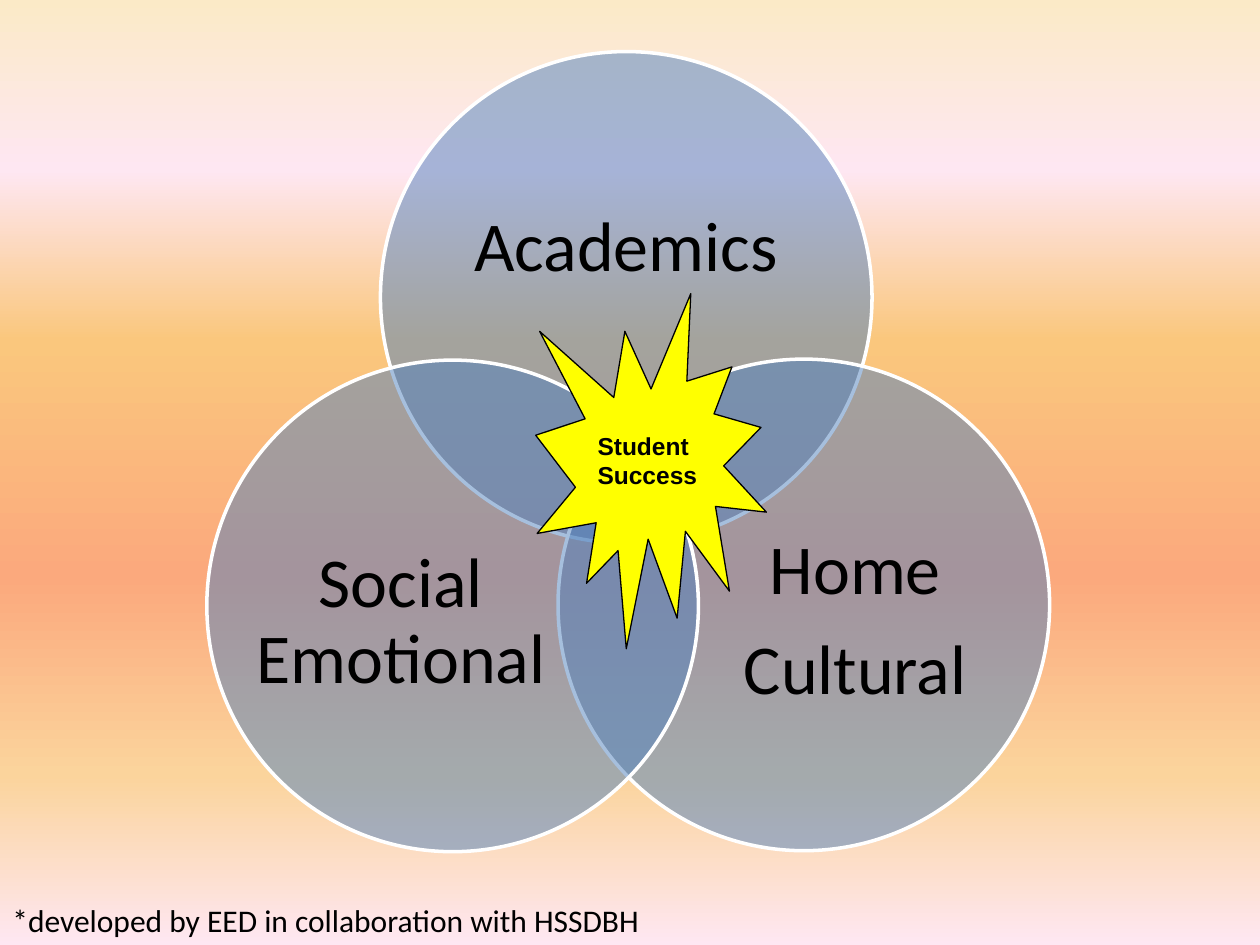
from lxml.etree import SubElement
from pptx import Presentation
from pptx.dml.color import RGBColor
from pptx.enum.shapes import MSO_SHAPE as Shape
from pptx.enum.text import MSO_ANCHOR as Anchor, MSO_AUTO_SIZE as AutoSize, PP_ALIGN as Align
from pptx.oxml.ns import qn
from pptx.util import Cm, Pt

COLORS = {"circle": "4F81BD", "outline": "FFFFFF", "star": "FFFF00", "ink": "000000"}
BACKGROUND_STOPS = [(0, "FBEAC7"), (18, "FEE7F2"), (36, "FAC77D"),
                    (61, "FBA97D"), (82, "FBD49C"), (100, "FEE7F2")]


def add_figure(kind, left, top, width, height, fill, line, line_width):
    shape = slide.shapes.add_shape(kind, Cm(left), Cm(top), Cm(width), Cm(height))
    shape.shadow.inherit = False
    shape.fill.solid()
    shape.fill.fore_color.rgb = RGBColor.from_string(COLORS[fill])
    shape.line.color.rgb = RGBColor.from_string(COLORS[line])
    shape.line.width = Pt(line_width)
    return shape


def write_text(shape, text, font, size, bold=False, align=Align.LEFT):
    text_frame = shape.text_frame
    text_frame.word_wrap = True
    text_frame.text = text
    for paragraph in text_frame.paragraphs:
        paragraph.alignment = align
        for run in paragraph.runs:
            run.font.name = font
            run.font.size = Pt(size)
            run.font.bold = bold
            run.font.color.rgb = RGBColor.from_string(COLORS["ink"])
    return text_frame


presentation = Presentation()
presentation.slide_width, presentation.slide_height = Cm(25.4), Cm(19.05)
slide = presentation.slides.add_slide(presentation.slide_layouts[6])

# Background: vertical gradient with six stops
background_fill = slide.background.fill
background_fill.gradient()
background_fill.gradient_angle = 270  # counter-clockwise, so top to bottom
stop_list = slide.element.find(".//" + qn("a:gsLst"))
for stop in list(stop_list):
    stop_list.remove(stop)
for position, color in BACKGROUND_STOPS:
    stop = SubElement(stop_list, qn("a:gs"), pos=str(position * 1000))
    SubElement(stop, qn("a:srgbClr"), val=color)

# Venn circles, each followed by its label box (left, top, width, height)
DIAMETER = 9.91
circles = [
    ("Academics", 7.67, 1.04, (8.99, 2.79, 7.26, 4.45)),
    ("Home\nCultural", 11.25, 7.24, (14.27, 9.8, 5.94, 5.46)),
    ("Social Emotional", 4.17, 7.26, (5.11, 9.83, 5.94, 5.46)),
]
for label, left, top, label_box in circles:
    circle = add_figure(Shape.OVAL, left, top, DIAMETER, DIAMETER, "circle", "outline", 2)
    fill_color = circle.element.spPr.find(qn("a:solidFill"))[0]
    SubElement(fill_color, qn("a:alpha"), val="50000")

    box = slide.shapes.add_textbox(*[Cm(length) for length in label_box])
    text_frame = write_text(box, label, "Calibri", 40, align=Align.CENTER)
    text_frame.vertical_anchor = Anchor.MIDDLE
    text_frame.margin_left = text_frame.margin_right = 0
    text_frame.margin_top = text_frame.margin_bottom = 0
    for paragraph in text_frame.paragraphs:
        paragraph.line_spacing = 0.9
        paragraph.space_after = Pt(14)

# Central star
star = add_figure(Shape.EXPLOSION1, 10.8, 5.92, 4.65, 7.16, "star", "ink", 0.75)
write_text(star, "Student\nSuccess", "Arial", 14, bold=True).vertical_anchor = Anchor.MIDDLE

# Footnote
footnote = slide.shapes.add_textbox(Cm(0), Cm(18.03), Cm(25.35), Cm(1.02))
write_text(footnote, "*developed by EED in collaboration with HSSDBH", "Calibri", 18)
footnote.text_frame.auto_size = AutoSize.SHAPE_TO_FIT_TEXT

presentation.save("out.pptx")
